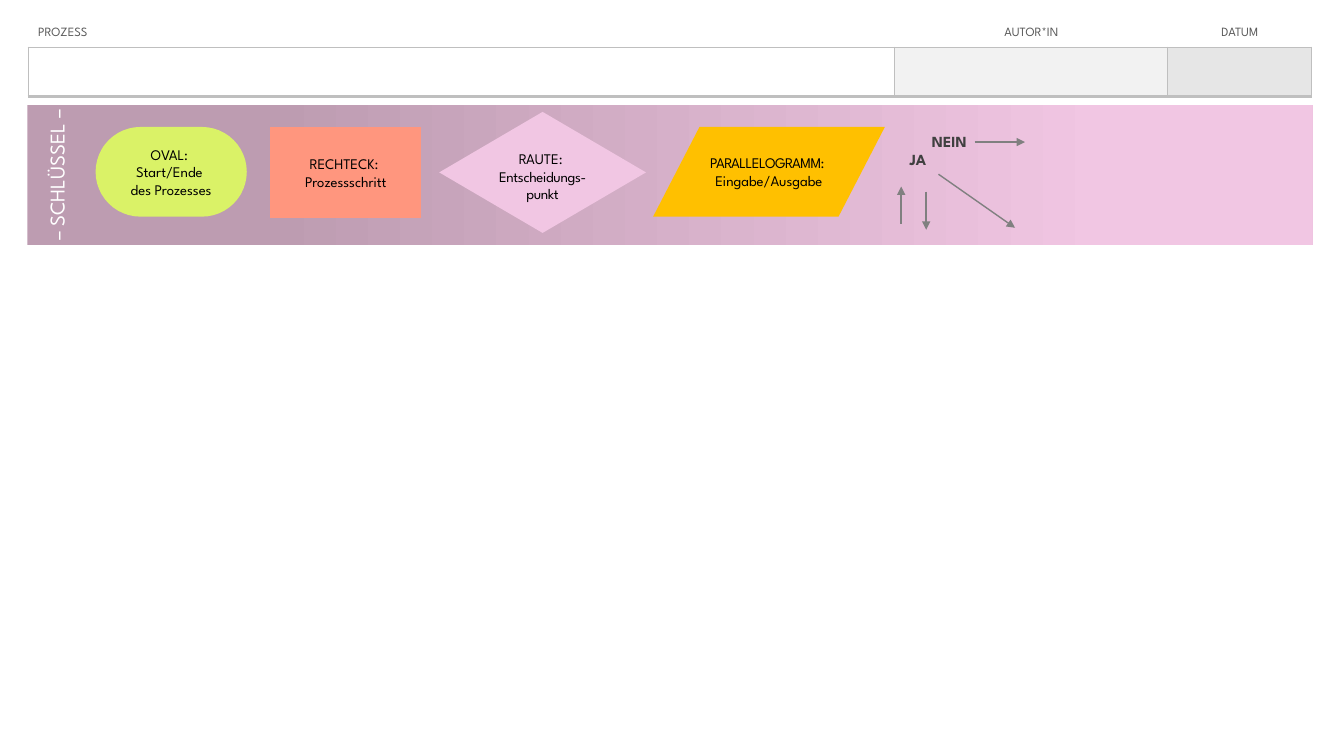
import lxml.etree
import pptx
import pptx.dml.color
import pptx.enum.shapes
import pptx.enum.text
import pptx.oxml
import pptx.oxml.ns
import pptx.util

Cm = pptx.util.Cm
Pt = pptx.util.Pt
qn = pptx.oxml.ns.qn
SHAPE = pptx.enum.shapes.MSO_SHAPE
ALIGN = pptx.enum.text.PP_ALIGN
ANCHOR = pptx.enum.text.MSO_ANCHOR
FONT = "League Spartan"
BORDER = "BFBFBF"


def color(hex_value):
    return pptx.dml.color.RGBColor.from_string(hex_value)


def write_text(frame, text, size=10.5, hue="000000", bold=False, align=ALIGN.CENTER, spacing=()):
    for index, line in enumerate(text.split("\n")):
        paragraph = frame.paragraphs[0] if index == 0 else frame.add_paragraph()
        paragraph.alignment = align
        run = paragraph.add_run()
        run.text = line
        run.font.name = FONT
        run.font.size = Pt(size)
        run.font.bold = bold
        run.font.color.rgb = color(hue)
        if index < len(spacing):
            run._r.get_or_add_rPr().set("spc", str(spacing[index]))


def set_frame(frame, margin, anchor=ANCHOR.MIDDLE):
    frame.word_wrap = True
    frame.vertical_anchor = anchor
    frame.margin_left = frame.margin_right = Cm(margin)
    frame.margin_top = frame.margin_bottom = Cm(margin)


def add_plain_shape(slide, kind, box):
    shape = slide.shapes.add_shape(kind, *map(Cm, box))
    shape.shadow.inherit = False
    shape.line.fill.background()
    return shape


def add_key_band(slide):
    band = add_plain_shape(slide, SHAPE.RECTANGLE, (0.69, 2.64, 32.39, 3.53))
    band.fill.gradient()
    band.fill.gradient_angle = 0
    stops = ((0.19, "BD9CB1"), (0.84, "F1C6E3"))
    for stop, (position, hue) in zip(band.fill.gradient_stops, stops):
        stop.position = position
        stop.color.rgb = color(hue)


def add_key_symbol(slide, kind, box, hue, text, margin=0.05, anchor=ANCHOR.MIDDLE, spacing=()):
    symbol = add_plain_shape(slide, kind, box)
    symbol.fill.solid()
    symbol.fill.fore_color.rgb = color(hue)
    set_frame(symbol.text_frame, margin, anchor)
    write_text(symbol.text_frame, text, spacing=spacing)
    return symbol


def add_label(slide, box, text, rotation=0, **text_format):
    label = slide.shapes.add_textbox(*map(Cm, box))
    label.rotation = rotation
    set_frame(label.text_frame, 0.05)
    write_text(label.text_frame, text, **text_format)


def add_arrow(slide, *ends):
    arrow = slide.shapes.add_connector(pptx.enum.shapes.MSO_CONNECTOR.STRAIGHT, *map(Cm, ends))
    arrow.line.color.rgb = color("808080")
    arrow.line.width = Pt(1)
    line = arrow.line._get_or_add_ln()
    lxml.etree.SubElement(line, qn("a:tailEnd"), type="triangle")
    lxml.etree.SubElement(arrow._element.spPr, qn("a:effectLst"))


def set_borders(cell, **widths):
    properties = cell._tc.get_or_add_tcPr()
    for index, (side, width) in enumerate(widths.items()):
        line = lxml.etree.Element(qn(f"a:ln{side}"), w=str(Pt(width)))
        fill = lxml.etree.SubElement(line, qn("a:solidFill"))
        lxml.etree.SubElement(fill, qn("a:srgbClr"), val=BORDER)
        properties.insert(index, line)


def add_header_table(slide):
    columns = (
        (21.84, "PROZESS", ALIGN.LEFT, 0.25, "FFFFFF"),
        (6.88, "AUTOR*IN", ALIGN.CENTER, 0.03, "F2F2F2"),
        (3.63, "DATUM", ALIGN.CENTER, 0.03, "E6E6E6"),
    )
    table = slide.shapes.add_table(
        2, len(columns), Cm(0.71), Cm(0.48), Cm(32.35), Cm(1.95)).table
    table.first_row = table.horz_banding = False
    table.rows[0].height, table.rows[1].height = Cm(0.71), Cm(1.24)
    for index, (width, title, align, indent, hue) in enumerate(columns):
        table.columns[index].width = Cm(width)
        heading, entry = table.cell(0, index), table.cell(1, index)
        heading.margin_left = Cm(indent)
        heading.margin_right = heading.margin_top = Cm(0.03)
        heading.margin_bottom = 0
        heading.vertical_anchor = ANCHOR.MIDDLE
        heading.fill.background()
        set_borders(heading, B=1)
        write_text(heading.text_frame, title, size=9, hue="595959", align=align)
        entry.fill.solid()
        entry.fill.fore_color.rgb = color(hue)
        set_borders(entry, L=1, R=1, T=1, B=2.25)


def main():
    presentation = pptx.Presentation()
    presentation.slide_width, presentation.slide_height = Cm(33.87), Cm(19.05)
    slide = presentation.slides.add_slide(presentation.slide_layouts[6])

    add_key_band(slide)
    add_header_table(slide)

    answer_format = {"size": 11, "hue": "404040", "bold": True}
    add_label(slide, (22.35, 3.45, 1.57, 1.14), "JA", **answer_format)
    add_label(slide, (23.14, 3, 1.57, 1.14), "NEIN", **answer_format)
    add_label(slide, (-0.61, 3.78, 4.06, 1.27), "– SCHLÜSSEL –",
              rotation=270, size=15, hue="FFFFFF")

    start_end = add_key_symbol(slide, SHAPE.ROUNDED_RECTANGLE, (2.41, 3.2, 3.81, 2.26),
                               "DAF267", "OVAL: \nStart/Ende \ndes Prozesses")
    start_end.adjustments[0] = 0.5
    add_key_symbol(slide, SHAPE.FLOWCHART_PROCESS, (6.81, 3.2, 3.81, 2.29),
                   "FF967E", "RECHTECK: \nProzessschritt")
    add_key_symbol(slide, SHAPE.FLOWCHART_DATA, (16.46, 3.2, 5.84, 2.26),
                   "FFC000", "PARALLELOGRAMM: \nEingabe/Ausgabe", margin=0, spacing=(-30,))
    add_key_symbol(slide, SHAPE.FLOWCHART_DECISION, (11.07, 2.82, 5.21, 3.05),
                   "F1C6E3", "RAUTE: \nEntscheidungs-punkt", margin=0,
                   anchor=ANCHOR.BOTTOM, spacing=(0, -20))

    for ends in (
        (23.65, 4.39, 25.58, 5.74),
        (24.56, 3.58, 25.83, 3.58),
        (22.71, 5.64, 22.71, 4.7),
        (23.34, 4.83, 23.34, 5.79),
    ):
        add_arrow(slide, *ends)

    presentation.save("out.pptx")


if __name__ == "__main__":
    main()
